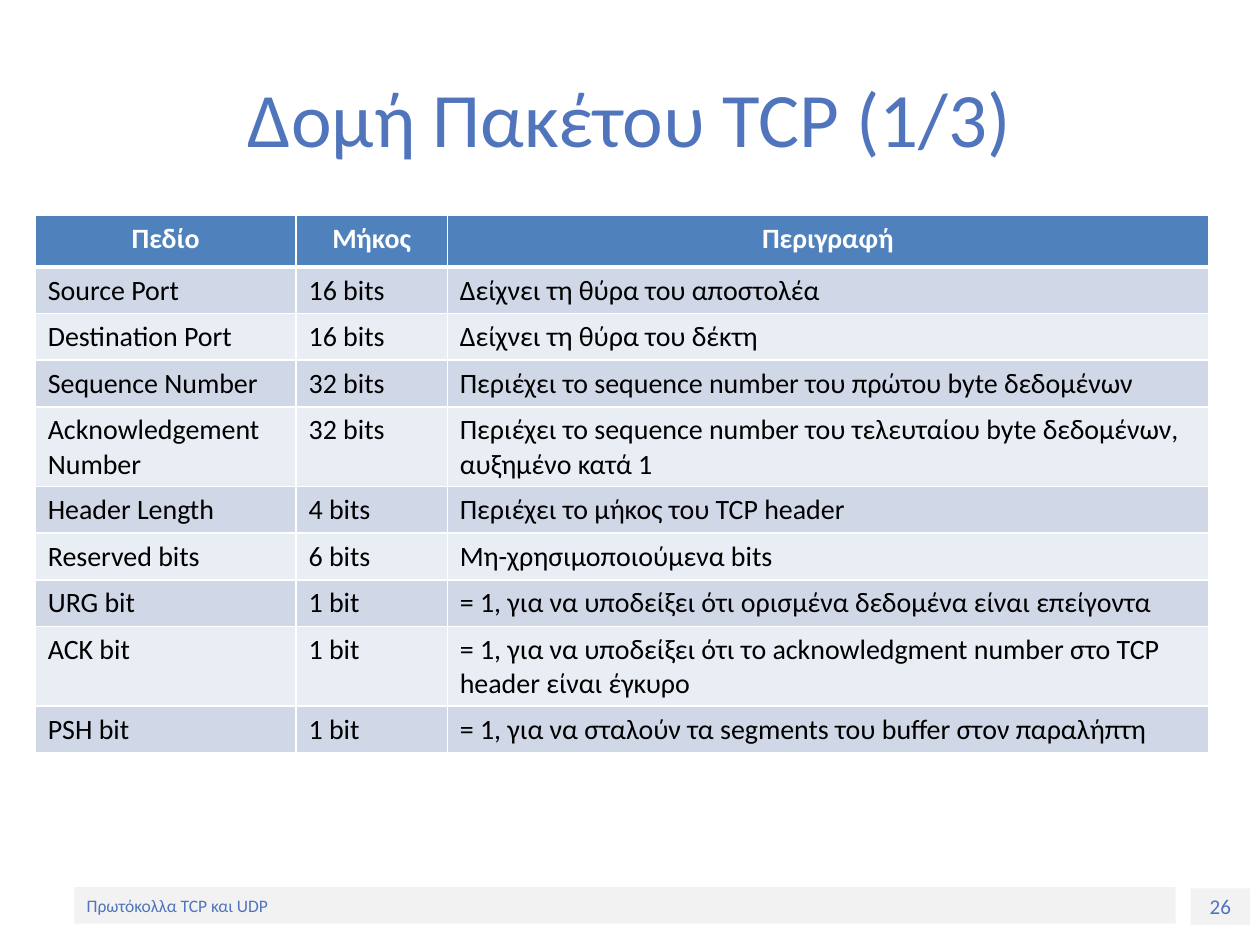
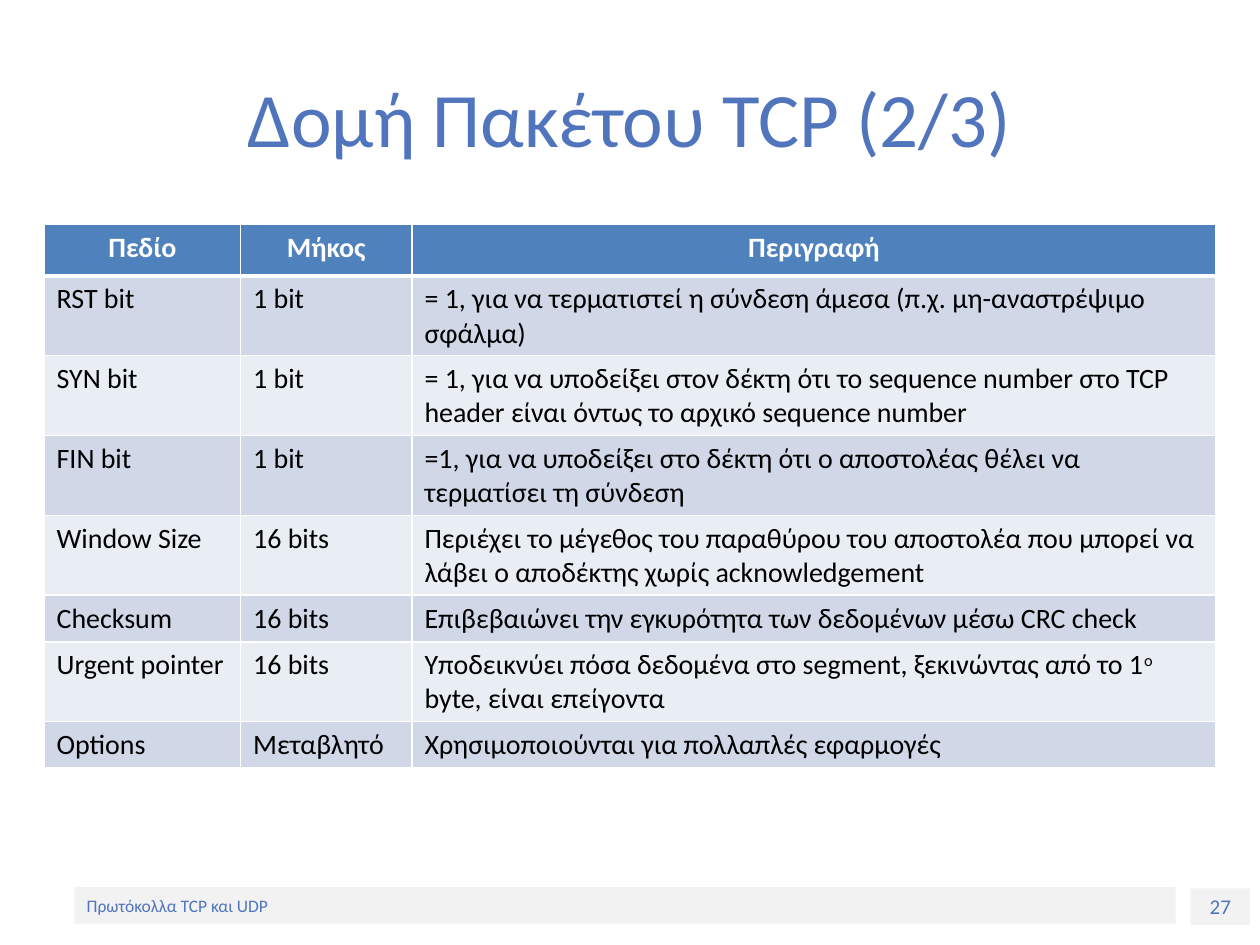
import lxml.etree
import pptx
import pptx.dml.color
import pptx.enum.shapes
import pptx.enum.text
import pptx.oxml.ns
import pptx.util

Inches = pptx.util.Inches
Pt = pptx.util.Pt
ALIGN = pptx.enum.text.PP_ALIGN
ANCHOR = pptx.enum.text.MSO_ANCHOR

COLORS = {
    "accent": "5075BC",
    "footer": "F2F2F2",
    "header": "4F81BD",
    "odd_row": "D0D8E8",
    "even_row": "E9EDF4",
    "white": "FFFFFF",
    "black": "000000",
}
FONT = "Calibri"
FOOTER_TEXT = "Πρωτόκολλα TCP και UDP"
TITLE_BOX = (0.5, 0.3, 9, 1.25)
FOOTER_BOX = (0.59, 7.04, 8.74, 0.29)
PAGE_BOX = (9.45, 7.05, 0.47, 0.29)
HEADER_HEIGHT, ROW_HEIGHT = 0.41, 0.37
COLUMN_HEADINGS = ("Πεδίο", "Μήκος", "Περιγραφή")

# A description is a string, or a list of (text, is_superscript) parts.
SLIDES = [
    {
        "title": "Δομή Πακέτου TCP (1/3)",
        "page": "26",
        "table_box": (0.28, 1.71, 9.3, 4.25),
        "column_widths": (2.07, 1.2, 6.04),
        "fields": [
            ("Source Port", "16 bits", "Δείχνει τη θύρα του αποστολέα"),
            ("Destination Port", "16 bits", "Δείχνει τη θύρα του δέκτη"),
            ("Sequence Number", "32 bits",
             "Περιέχει το sequence number του πρώτου byte δεδομένων"),
            ("Acknowledgement Number", "32 bits",
             "Περιέχει το sequence number του τελευταίου byte δεδομένων, "
             "αυξημένο κατά 1"),
            ("Header Length", "4 bits", "Περιέχει το μήκος του TCP header"),
            ("Reserved bits", "6 bits", "Μη-χρησιμοποιούμενα bits"),
            ("URG bit", "1 bit",
             "= 1, για να υποδείξει ότι ορισμένα δεδομένα είναι επείγοντα"),
            ("ACK bit", "1 bit",
             "= 1, για να υποδείξει ότι το acknowledgment number στο TCP "
             "header είναι έγκυρο"),
            ("PSH bit", "1 bit",
             "= 1, για να σταλούν τα segments του buffer στον παραλήπτη"),
        ],
    },
    {
        "title": "Δομή Πακέτου TCP (2/3)",
        "page": "27",
        "table_box": (0.35, 1.78, 9.29, 4.31),
        "column_widths": (1.56, 1.36, 6.38),
        "fields": [
            ("RST bit", "1 bit",
             "= 1, για να τερματιστεί η σύνδεση άμεσα (π.χ. μη-αναστρέψιμο "
             "σφάλμα)"),
            ("SYN bit", "1 bit",
             "= 1, για να υποδείξει στον δέκτη ότι το sequence number στο TCP "
             "header είναι όντως το αρχικό sequence number"),
            ("FIN bit", "1 bit",
             "=1, για να υποδείξει στο δέκτη ότι ο αποστολέας θέλει να "
             "τερματίσει τη σύνδεση"),
            ("Window Size", "16 bits",
             "Περιέχει το μέγεθος του παραθύρου του αποστολέα που μπορεί να "
             "λάβει ο αποδέκτης χωρίς acknowledgement"),
            ("Checksum", "16 bits",
             "Επιβεβαιώνει την εγκυρότητα των δεδομένων μέσω CRC check"),
            ("Urgent pointer", "16 bits",
             [("Υποδεικνύει πόσα δεδομένα στο segment, ξεκινώντας από το 1", False),
              ("ο ", True),
              ("byte, είναι επείγοντα", False)]),
            ("Options", "Μεταβλητό", "Χρησιμοποιούνται για πολλαπλές εφαρμογές"),
        ],
    },
]


def rgb(color):
    return pptx.dml.color.RGBColor.from_string(COLORS[color])


def write(frame, content, size, color, align=ALIGN.LEFT, bold=False):
    """Fill the first paragraph of a text frame, one run per part."""
    paragraph = frame.paragraphs[0]
    paragraph.alignment = align
    parts = [(content, False)] if isinstance(content, str) else content
    for text, is_superscript in parts:
        run = paragraph.add_run()
        run.text = text
        run.font.name = FONT
        run.font.size = Pt(size)
        run.font.bold = bold
        run.font.color.rgb = rgb(color)
        if is_superscript:
            run.font._element.set("baseline", "30000")


def add_title(slide, box, text):
    title = slide.shapes.add_textbox(*map(Inches, box)).text_frame
    title.word_wrap = True
    title.vertical_anchor = ANCHOR.MIDDLE
    write(title, text, 44, "accent", ALIGN.CENTER)


def add_footer_band(slide, box, text, size, align):
    band = slide.shapes.add_shape(
        pptx.enum.shapes.MSO_SHAPE.RECTANGLE, *map(Inches, box))
    band.shadow.inherit = False
    band.fill.solid()
    band.fill.fore_color.rgb = rgb("footer")
    band.line.fill.background()
    band.text_frame.word_wrap = True
    band.text_frame.vertical_anchor = ANCHOR.MIDDLE
    write(band.text_frame, text, size, "accent", align)


def set_borders(cell, widths):
    """Draw white borders; widths maps L, R, T, B to points, in that order."""
    properties = cell._tc.get_or_add_tcPr()
    qn = pptx.oxml.ns.qn
    for side, width in widths.items():
        line = lxml.etree.SubElement(properties, qn(f"a:ln{side}"), w=str(Pt(width)))
        fill = lxml.etree.SubElement(line, qn("a:solidFill"))
        lxml.etree.SubElement(fill, qn("a:srgbClr"), val=COLORS["white"])


def add_field_table(slide, box, column_widths, fields):
    rows = [COLUMN_HEADINGS, *fields]
    frame = slide.shapes.add_table(
        len(rows), len(column_widths), *map(Inches, box))
    table = frame.table
    for column, width in zip(table.columns, column_widths):
        column.width = Inches(width)
    for row_index, values in enumerate(rows):
        is_header = row_index == 0
        table.rows[row_index].height = Inches(
            HEADER_HEIGHT if is_header else ROW_HEIGHT)
        band = "header" if is_header else ("even_row", "odd_row")[row_index % 2]
        borders = {"L": 1, "R": 1,
                   "T": 3 if row_index == 1 else 1,
                   "B": 3 if is_header else 1}
        for column_index, value in enumerate(values):
            cell = table.cell(row_index, column_index)
            set_borders(cell, borders)
            cell.fill.solid()
            cell.fill.fore_color.rgb = rgb(band)
            write(cell.text_frame, value, 16,
                  "white" if is_header else "black",
                  ALIGN.CENTER if is_header else ALIGN.LEFT, is_header)
    frame.height = Inches(box[3])


def add_packet_slide(deck, content):
    slide = deck.slides.add_slide(deck.slide_layouts[6])
    add_footer_band(slide, PAGE_BOX, content["page"], 12, ALIGN.CENTER)
    add_footer_band(slide, FOOTER_BOX, FOOTER_TEXT, 10, ALIGN.LEFT)
    add_title(slide, TITLE_BOX, content["title"])
    add_field_table(slide, content["table_box"], content["column_widths"],
                    content["fields"])


def main():
    deck = pptx.Presentation()
    deck.slide_width, deck.slide_height = Inches(10), Inches(7.5)
    for content in SLIDES:
        add_packet_slide(deck, content)
    deck.save("out.pptx")


if __name__ == "__main__":
    main()
